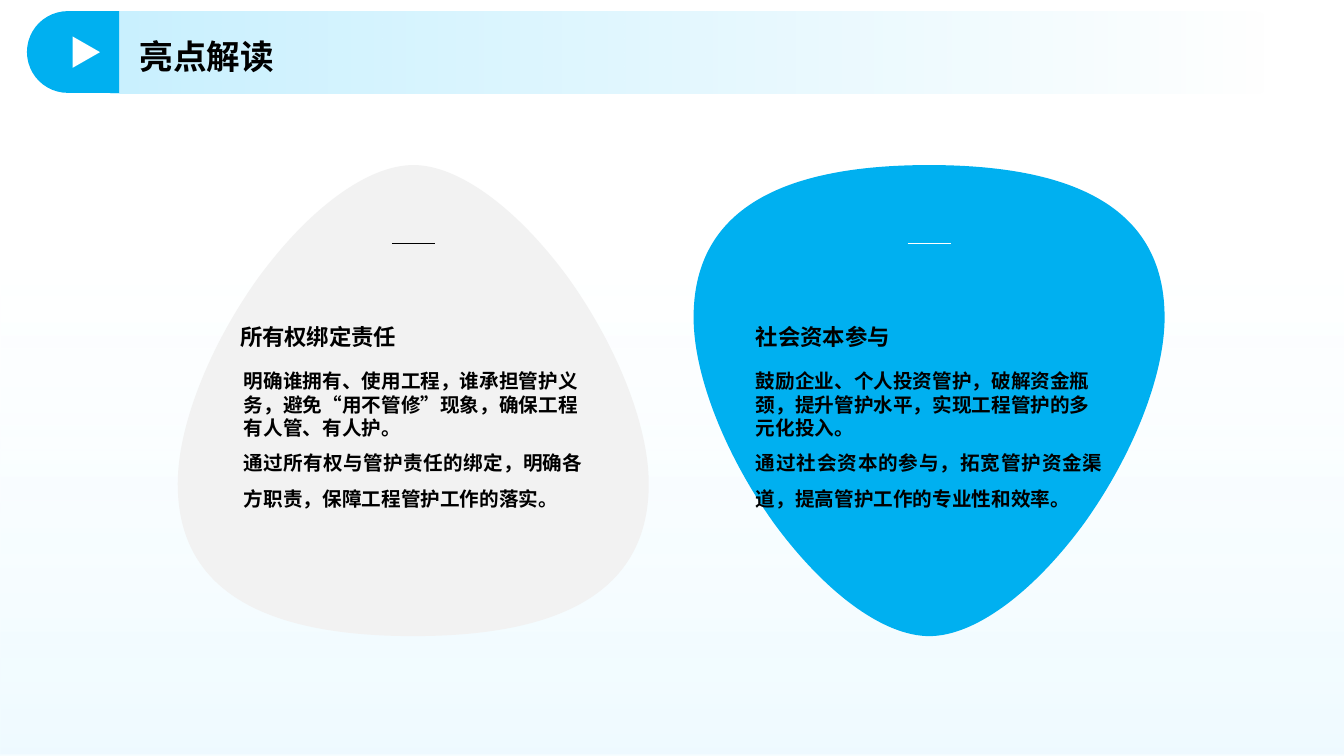
"""Build the highlights slide with two mirrored rounded-triangle panels."""
from lxml.etree import SubElement
from pptx import Presentation
from pptx.dml.color import RGBColor
from pptx.enum.shapes import MSO_CONNECTOR, MSO_SHAPE
from pptx.enum.text import MSO_ANCHOR, PP_ALIGN
from pptx.oxml.ns import qn
from pptx.util import Cm, Pt

FONT = "Noto Sans CJK SC"
HEADING = "亮点解读"
PANELS = [
    dict(title="所有权绑定责任",
         body="明确谁拥有、使用工程，谁承担管护义务，避免“用不管修”现象，确保工程有人管、有人护。\n"
              "通过所有权与管护责任的绑定，明确各方职责，保障工程管护工作的落实。",
         fill="F2F2F2", dash="000000", body_inset=0.1, flipped=False),
    dict(title="社会资本参与",
         body="鼓励企业、个人投资管护，破解资金瓶颈，提升管护水平，实现工程管护的多元化投入。\n"
              "通过社会资本的参与，拓宽管护资金渠道，提高管护工作的专业性和效率。",
         fill="00B0F0", dash="FFFFFF", body_inset=0, flipped=True),
]
PANEL_LEFT, PANEL_TOP, PANEL_SIZE, PANEL_PITCH = 4.48, 4.16, 11.87, 13
HALF_OUTLINE = [
    (5.94, 11.87), (1.96, 11.87), (0, 10.59), (0, 8.03), (0, 6.58),
    (0.79, 4.57), (2.03, 2.84), (3.33, 1.07), (4.8, 0), (5.94, 0),
]


def color(value):
    return RGBColor.from_string(value)


def add_box(page, kind, left, top, width, height, fill=None):
    box = page.shapes.add_shape(kind, Cm(left), Cm(top), Cm(width), Cm(height))
    box.shadow.inherit = False
    box.line.fill.background()
    if fill:
        box.fill.solid()
        box.fill.fore_color.rgb = color(fill)
    return box


def set_gradient(box, angle, stops):
    box.fill.gradient()
    box.fill.gradient_angle = angle
    for stop, (position, value, opacity) in zip(box.fill.gradient_stops, stops):
        stop.position = position
        stop.color.rgb = color(value)
    elements = box._element.spPr.iter(qn("a:srgbClr"))
    for element, (position, value, opacity) in zip(elements, stops):
        SubElement(element, qn("a:alpha")).set("val", str(opacity * 1000))


def add_text(page, left, top, width, height, text, size, anchor, spacing):
    frame = page.shapes.add_textbox(Cm(left), Cm(top), Cm(width), Cm(height)).text_frame
    frame.margin_left = frame.margin_right = frame.margin_top = frame.margin_bottom = 0
    frame.word_wrap = True
    frame.vertical_anchor = anchor
    para = frame.paragraphs[0]
    para.alignment = PP_ALIGN.JUSTIFY
    para.line_spacing = spacing
    span = para.add_run()
    span.text = text
    span.font.name, span.font.size, span.font.bold = FONT, Pt(size), True
    span.font.color.rgb = color("000000")
    SubElement(span.font._element, qn("a:ea")).set("typeface", FONT)


def add_blob(page, left, flipped, fill):
    mirrored = [(PANEL_SIZE - x, y) for x, y in reversed(HALF_OUTLINE[:-1])]
    outline = [(Cm(x), Cm(PANEL_SIZE - y if flipped else y))
               for x, y in HALF_OUTLINE + mirrored]
    corners = outline[::3]
    builder = page.shapes.build_freeform(*corners[0])
    builder.add_line_segments(corners[1:], close=True)
    blob = builder.convert_to_shape(Cm(left), Cm(PANEL_TOP))
    for index, segment in enumerate(list(blob._element.iter(qn("a:lnTo")))):
        segment.tag = qn("a:cubicBezTo")
        for child in list(segment):
            segment.remove(child)
        for x, y in outline[3 * index + 1:3 * index + 4]:
            point = SubElement(segment, qn("a:pt"))
            point.set("x", str(x))
            point.set("y", str(y))
    blob.shadow.inherit = False
    blob.fill.solid()
    blob.fill.fore_color.rgb = color(fill)
    blob.line.fill.background()


def add_dash(page, center, top, value):
    dash = page.shapes.add_connector(MSO_CONNECTOR.STRAIGHT, Cm(center - 0.54), Cm(top),
                                     Cm(center + 0.54), Cm(top))
    dash.line.color.rgb = color(value)
    dash.line.width = Pt(0.75)
    SubElement(dash._element.spPr, qn("a:effectLst"))


def add_panel(page, left, panel):
    add_blob(page, left, panel["flipped"], panel["fill"])
    add_dash(page, left + PANEL_SIZE / 2, 6.14, panel["dash"])
    text_left, text_width, inset = left + 1.57, 8.74, panel["body_inset"]
    add_text(page, text_left, 6.55, text_width, 2.26, panel["title"], 16,
             MSO_ANCHOR.BOTTOM, 1.3)
    add_text(page, text_left + inset, 9.3, text_width - 2 * inset, 3.91, panel["body"], 14,
             MSO_ANCHOR.TOP, 1.5)


def add_header(page):
    bar = add_box(page, MSO_SHAPE.ROUNDED_RECTANGLE, 2.54, 0.3, 29.46, 2.05)
    set_gradient(bar, 0, [(0, "C9F1FF", 100), (1, "C9F1FF", 0)])
    add_text(page, 3.52, 0.67, 21.62, 1.37, HEADING, 24, MSO_ANCHOR.MIDDLE, 1.1)
    cap = add_box(page, MSO_SHAPE.ROUND_2_SAME_RECTANGLE, 0.81, 0.15, 2.06, 2.32, "00B0F0")
    cap.adjustments[0], cap.adjustments[1] = 0.5, 0
    cap.rotation = 270
    arrow = add_box(page, MSO_SHAPE.ISOSCELES_TRIANGLE, 1.78, 0.97, 0.79, 0.69, "FFFFFF")
    arrow.rotation = 90


def main():
    deck = Presentation()
    deck.slide_width, deck.slide_height = Cm(33.87), Cm(19.05)
    page = deck.slides.add_slide(deck.slide_layouts[6])
    backdrop = add_box(page, MSO_SHAPE.RECTANGLE, 0, -0.02, 33.87, 19.07)
    set_gradient(backdrop, 270, [(0.35, "C9F1FF", 0), (1, "93E2FF", 15)])
    for index, panel in enumerate(PANELS):
        add_panel(page, PANEL_LEFT + index * PANEL_PITCH, panel)
    add_header(page)
    deck.save("out.pptx")


if __name__ == "__main__":
    main()
